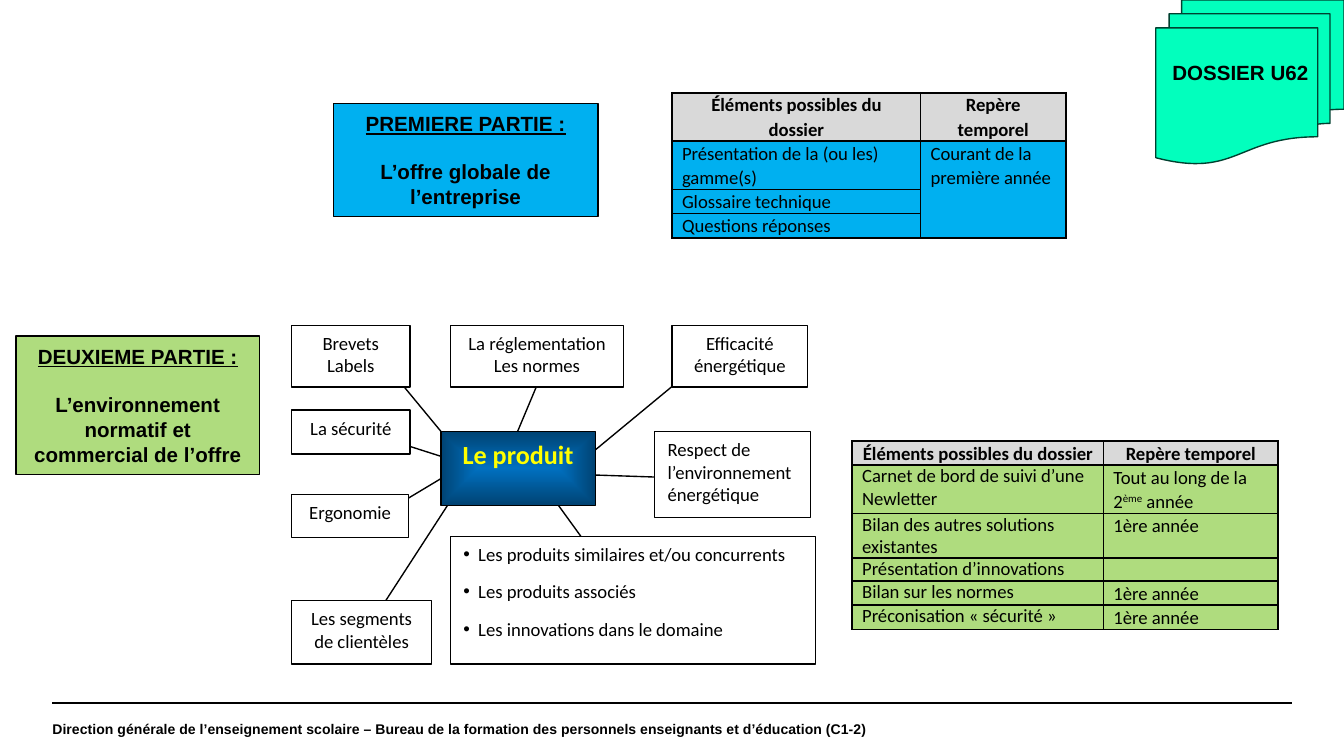
from lxml import etree
from pptx import Presentation
from pptx.dml.color import RGBColor
from pptx.enum.shapes import MSO_CONNECTOR, MSO_SHAPE
from pptx.enum.text import MSO_ANCHOR, PP_ALIGN
from pptx.oxml.ns import qn
from pptx.util import Inches, Pt

CENTER, LEFT = PP_ALIGN.CENTER, PP_ALIGN.LEFT
TOP, MIDDLE = MSO_ANCHOR.TOP, MSO_ANCHOR.MIDDLE
RECTANGLE, DOCUMENTS = MSO_SHAPE.RECTANGLE, MSO_SHAPE.FLOWCHART_MULTIDOCUMENT
STRAIGHT = MSO_CONNECTOR.STRAIGHT

COLORS = {
    "black": "000000", "white": "FFFFFF", "header": "D9D9D9",
    "blue": "00B0F0", "green": "AFDC7E", "yellow": "FFFF00",
    "core": "0070C0", "edge": "004373", "mint": "02FFBD", "pine": "004130",
}


def rgb(name):
    return RGBColor.from_string(COLORS[name])


def style(paragraph, size=10, face="Calibri", color="black", bold=False, align=CENTER):
    paragraph.alignment = align
    font = paragraph.font
    font.size, font.name, font.bold = Pt(size), face, bold
    font.color.rgb = rgb(color)


def write(frame, lines, anchor=TOP, **look):
    frame.word_wrap = True
    frame.vertical_anchor = anchor
    for i, line in enumerate(lines):
        paragraph = frame.paragraphs[0] if i == 0 else frame.add_paragraph()
        paragraph.text = line
        style(paragraph, **look)


def add_box(slide, box, fill, kind=RECTANGLE, outline="black"):
    shape = slide.shapes.add_shape(kind, *map(Inches, box))
    shape.shadow.inherit = False
    if fill:
        shape.fill.solid()
        shape.fill.fore_color.rgb = rgb(fill)
    shape.line.color.rgb = rgb(outline)
    shape.line.width = Pt(0.75)
    return shape


def add_line(slide, start, end, width=0.75):
    line = slide.shapes.add_connector(STRAIGHT, *map(Inches, (*start, *end)))
    line.line.color.rgb = rgb("black")
    line.line.width = Pt(width)
    etree.SubElement(line._element.spPr, qn("a:effectLst"))


def add_footer(slide, box):
    left, top, width, height = box
    add_line(slide, (left, top), (10 - left, top), 0.8)
    frame = slide.shapes.add_textbox(*map(Inches, (left, top, width, height))).text_frame
    frame.margin_left = frame.margin_right = frame.margin_top = frame.margin_bottom = 0
    write(frame, ["Direction générale de l’enseignement scolaire – Bureau de la formation "
                  "des personnels enseignants et d’éducation (C1-2)"],
          MIDDLE, size=7.5, face="Arial", bold=True, align=LEFT)


def add_part(slide, box, fill, heading, theme):
    frame = add_box(slide, box, fill).text_frame
    write(frame, [heading, theme], MIDDLE, size=11, face="Arial", bold=True)
    title, body = frame.paragraphs
    title.font.underline = True
    body.space_before = Pt(12.5)


def add_borders(cell):
    properties = cell._tc.get_or_add_tcPr()
    for i, side in enumerate(("a:lnL", "a:lnR", "a:lnT", "a:lnB")):
        border = etree.Element(qn(side), w=str(Pt(1)))
        fill = etree.SubElement(border, qn("a:solidFill"))
        etree.SubElement(fill, qn("a:srgbClr"), val=COLORS["black"])
        properties.insert(i, border)


def fill_cell(cell, text, fill, spacing, **look):
    cell.margin_left = cell.margin_right = Pt(5.4)
    cell.margin_top = cell.margin_bottom = 0
    cell.fill.solid()
    cell.fill.fore_color.rgb = rgb(fill)
    add_borders(cell)
    paragraph = cell.text_frame.paragraphs[0]
    # Text between carets is raised
    for i, piece in enumerate(text.split("^")):
        if piece:
            run = paragraph.add_run()
            run.text = piece
            if i % 2:
                run._r.get_or_add_rPr().set("baseline", "30000")
    paragraph.line_spacing = spacing
    style(paragraph, **look)
    if not text:
        etree.SubElement(paragraph._p, qn("a:endParaRPr"), sz="1000")


def add_schedule(slide, origin, widths, heights, fill, rows, item_spacing):
    box = (*origin, sum(widths), sum(heights))
    rows = [("Éléments possibles du dossier", "Repère temporel"), *rows]
    table = slide.shapes.add_table(len(rows), 2, *map(Inches, box)).table
    for column, width in zip(table.columns, widths):
        column.width = Inches(width)
    for r, (texts, height) in enumerate(zip(rows, heights)):
        table.rows[r].height = Inches(height)
        for c, text in enumerate(texts):
            header = r == 0
            fill_cell(table.cell(r, c), text, "header" if header else fill,
                      item_spacing if c == 0 and not header else 1.07,
                      bold=header, align=CENTER if header else LEFT)
    return table


def add_product_map(slide, box):
    x, y = box[:2]

    # Spokes between the product and its topics
    spokes = [
        ((1.25, 1.02), (0.78, 0.87)), ((2.12, 1.11), (3.01, 1.14)),
        ((1.18, 1.1), (0.78, 1.34)), ((2.16, 1.01), (2.91, 0.39)),
        ((1.84, 1.14), (2.26, 1.72)), ((1.61, 0.96), (1.82, 0.46)),
        ((0.7, 2.05), (1.29, 1.14)), ((0.78, 0.39), (1.21, 0.91)),
    ]
    for start, end in spokes:
        add_line(slide, (x + start[0], y + start[1]), (x + end[0], y + end[1]))

    # Topics
    topics = [
        ((0, 0, 0.88, 0.46), ["Brevets", "Labels"], CENTER),
        ((1.18, 0, 1.29, 0.46), ["La réglementation", "Les normes"], CENTER),
        ((2.83, 0, 1.01, 0.46), ["Efficacité énergétique"], CENTER),
        ((0, 0.63, 0.88, 0.33), ["La sécurité"], CENTER),
        ((0, 1.26, 0.87, 0.32), ["Ergonomie"], CENTER),
        ((0, 2.05, 1.04, 0.47), ["Les segments de clientèles"], CENTER),
        ((2.7, 0.79, 1.16, 0.64), ["Respect de l’environnement énergétique"], LEFT),
    ]
    for (left, top, width, height), lines, align in topics:
        topic = add_box(slide, (x + left, y + top, width, height), "white")
        write(topic.text_frame, lines, align=align)

    # Related products
    related = add_box(slide, (x + 1.18, y + 1.57, 2.72, 0.95), "white").text_frame
    for i, text in enumerate(("Les produits similaires et/ou concurrents",
                              "Les produits associés",
                              "Les innovations dans le domaine")):
        paragraph = related.paragraphs[0] if i == 0 else related.add_paragraph()
        paragraph.text = text
        paragraph.space_after = Pt(8)
        properties = paragraph._p.get_or_add_pPr()
        properties.set("marL", str(Inches(0.11)))
        properties.set("indent", str(-Inches(0.11)))
        etree.SubElement(properties, qn("a:buFont"), typeface="Arial")
        etree.SubElement(properties, qn("a:buChar"), char="•")
        style(paragraph, align=LEFT)
    related.word_wrap = True
    related.vertical_anchor = TOP

    # Product, shaded from its centre
    product = add_box(slide, (x + 1.11, y + 0.79, 1.15, 0.55), None)
    product.fill.gradient()
    for stop, color in zip(product.fill.gradient_stops, ("core", "edge")):
        stop.color.rgb = rgb(color)
    gradient = product._element.spPr.find(qn("a:gradFill"))
    gradient.remove(gradient.find(qn("a:lin")))
    shade = etree.SubElement(gradient, qn("a:path"), path="shape")
    etree.SubElement(shade, qn("a:fillToRect"), l="50000", t="50000", r="50000", b="50000")
    write(product.text_frame, ["Le produit"], size=14, color="yellow", bold=True)


def add_dossier(slide, box):
    left, top, width, _ = box
    add_box(slide, box, "mint", DOCUMENTS, "pine")
    label = slide.shapes.add_textbox(*map(Inches, (left, top + 0.39, width - 0.14, 0.29)))
    write(label.text_frame, ["DOSSIER U62"], MIDDLE, size=11, face="Arial", bold=True)


def main():
    prs = Presentation()
    # Widescreen, 16:9
    prs.slide_width = Inches(10)
    prs.slide_height = prs.slide_width * 9 // 16
    slide = prs.slides.add_slide(prs.slide_layouts[6])

    add_footer(slide, (0.39, 5.23, 9.33, 0.39))
    add_part(slide, (2.48, 0.77, 1.97, 0.84), "blue",
             "PREMIERE PARTIE :", "L’offre globale de l’entreprise")
    first_year = add_schedule(
        slide, (5, 0.69), (1.85, 1.08), (0.36, 0.36, 0.18, 0.18), "blue",
        [("Présentation de la (ou les) gamme(s)", "Courant de la première année"),
         ("Glossaire technique", ""),
         ("Questions réponses", "")], 1.07)
    first_year.cell(1, 1).merge(first_year.cell(3, 1))

    add_part(slide, (0.12, 2.5, 1.81, 1.03), "green",
             "DEUXIEME PARTIE :", "L’environnement normatif et commercial de l’offre")
    add_schedule(
        slide, (6.34, 3.28), (1.87, 1.3), (0.18, 0.36, 0.33, 0.17, 0.18, 0.18), "green",
        [("Carnet de bord de suivi d’une Newletter", "Tout au long de la 2^ème^ année"),
         ("Bilan des autres solutions existantes", "1ère année"),
         ("Présentation d’innovations", ""),
         ("Bilan sur les normes", "1ère année"),
         ("Préconisation « sécurité »", "1ère année")], 1)

    add_product_map(slide, (2.17, 2.42, 3.9, 2.52))
    add_dossier(slide, (8.6, 0, 1.4, 1.22))
    prs.save("out.pptx")


if __name__ == "__main__":
    main()
